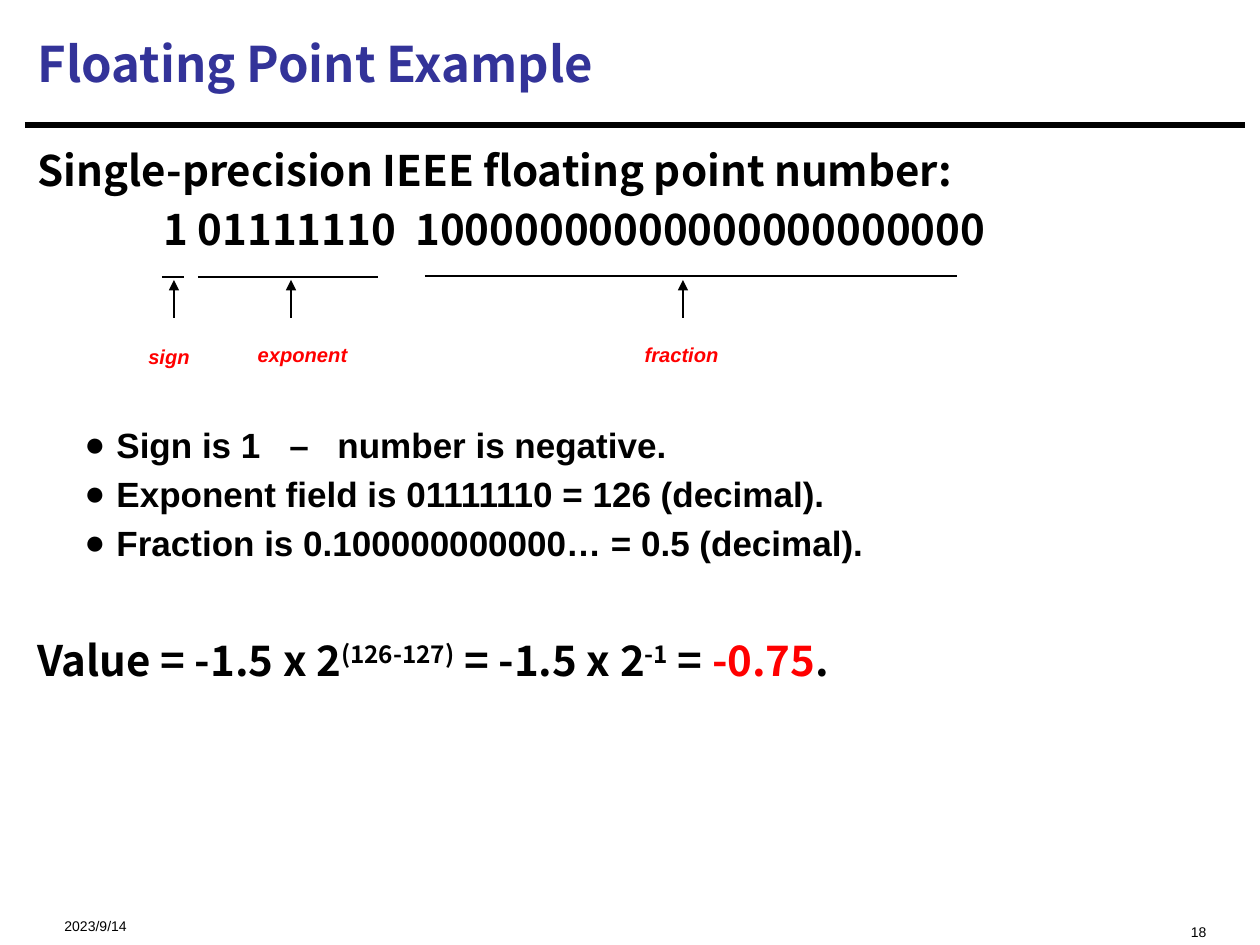
from pptx import Presentation
from pptx.dml.color import RGBColor
from pptx.enum.shapes import MSO_CONNECTOR
from pptx.enum.text import MSO_ANCHOR, PP_ALIGN
from pptx.oxml.ns import qn
from pptx.util import Emu, Pt
from lxml import etree

PX = 914400 // 126
SANS, CJK = "Arial", "Noto Sans CJK SC"
BLACK, RED, NAVY = "000000", "FF0000", "333399"
LEFT, CENTER, RIGHT = PP_ALIGN.LEFT, PP_ALIGN.CENTER, PP_ALIGN.RIGHT
MIDDLE = MSO_ANCHOR.MIDDLE


def add_run(p, text, size, font, color=BLACK, bold=True, italic=False):
    r = p.add_run()
    r.text = text
    r.font.size, r.font.name = Pt(size), font
    r.font.bold, r.font.italic = bold, italic
    r.font.color.rgb = RGBColor.from_string(color)
    rPr = r._r.get_or_add_rPr()
    etree.SubElement(rPr, qn("a:ea")).set("typeface", font)
    return r


def add_line(x1, y1, x2, y2, width, arrow=False):
    line = s.shapes.add_connector(
        MSO_CONNECTOR.STRAIGHT, *[Emu(v * PX) for v in (x1, y1, x2, y2)])
    line.line.color.rgb = RGBColor.from_string(BLACK)
    line.line.width = Pt(width)
    if arrow:
        etree.SubElement(line.line._get_or_add_ln(), qn("a:tailEnd")).set("type", "triangle")
    etree.SubElement(line._element.spPr, qn("a:effectLst"))


prs = Presentation()
prs.slide_width, prs.slide_height = Emu(1260 * PX), Emu(945 * PX)
s = prs.slides.add_slide(prs.slide_layouts[5])

# Title and rule
title = s.shapes.title
title.left, title.top, title.width, title.height = [Emu(v * PX) for v in (25, 10, 1218, 106)]
title.text_frame.vertical_anchor = MIDDLE
p = title.text_frame.paragraphs[0]
p.alignment = LEFT
add_run(p, "Floating Point Example", 28, CJK, NAVY)
add_line(25, 125, 1245, 125, 3.75)

# Body: text, size, font, line height, space before, margin, indent, tab stops
body = [
    ("Single-precision IEEE floating point number:", 24, CJK, 34, 0, 0, 0, []),
    ("1 01111110\t10000000000000000000000", 24, CJK, 34, 0, 126, 0, [387]),
    ("Sign is 1\t–\tnumber is negative.", 20, SANS, 28, 93, 79, -32, [252, 300]),
    ("Exponent field is 01111110 = 126 (decimal).", 20, SANS, 28, 0, 79, -32, []),
    ("Fraction is 0.100000000000… = 0.5 (decimal).", 20, SANS, 28, 0, 79, -32, []),
    ("Value = -1.5 x 2", 24, CJK, 34, 35, 0, 0, []),
]
tf = s.shapes.add_textbox(*[Emu(v * PX) for v in (25, 135, 1218, 755)]).text_frame
tf.word_wrap = True
tf.margin_top = 0
for i, (text, size, font, height, before, margin, indent, tabs) in enumerate(body):
    p = tf.paragraphs[0] if i == 0 else tf.add_paragraph()
    p.line_spacing, p.space_before = Pt(height), Pt(before)
    pPr = p._p.get_or_add_pPr()
    pPr.set("marL", str(margin * PX))
    pPr.set("indent", str(indent * PX))
    if indent:
        etree.SubElement(pPr, qn("a:buFont")).set("typeface", SANS)
        etree.SubElement(pPr, qn("a:buChar")).set("char", "●")
    if tabs:
        tab_list = etree.SubElement(pPr, qn("a:tabLst"))
        for pos in tabs:
            etree.SubElement(tab_list, qn("a:tab"), pos=str(pos * PX), algn="l")
    add_run(p, text, size, font)

# The last paragraph goes on with exponents and the result
for text, color, raised in [("(126-127)", BLACK, True), (" = -1.5 x 2", BLACK, False),
                            ("-1", BLACK, True), (" = ", BLACK, False),
                            ("-0.75", RED, False), (".", BLACK, False)]:
    r = add_run(p, text, 24, CJK, color)
    if raised:
        r._r.get_or_add_rPr().set("baseline", "30000")

# Underlines and arrows: line start, line end, line y, arrow x
for x1, x2, y, arrow_x in [(162, 184, 277, 174), (198, 378, 277, 291), (425, 957, 276, 683)]:
    add_line(x1, y, x2, y, 0.75)
    add_line(arrow_x, 318, arrow_x, 280, 0.75, arrow=True)

# Field labels, date and slide number
for text, x, y, w, h, align, size, color, strong in [
        ("sign", 120, 328, 98, 56, CENTER, 11.5, RED, True),
        ("exponent", 211, 326, 183, 56, CENTER, 11.5, RED, True),
        ("fraction", 604, 326, 155, 56, CENTER, 11.5, RED, True),
        ("2023/9/14", 52, 909, 315, 34, LEFT, 8, BLACK, False),
        ("18", 841, 915, 378, 34, RIGHT, 8, BLACK, False)]:
    tf = s.shapes.add_textbox(*[Emu(v * PX) for v in (x, y, w, h)]).text_frame
    tf.word_wrap = True
    tf.vertical_anchor = MIDDLE
    p = tf.paragraphs[0]
    p.alignment = align
    add_run(p, text, size, SANS, color, strong, strong)

prs.save("out.pptx")
